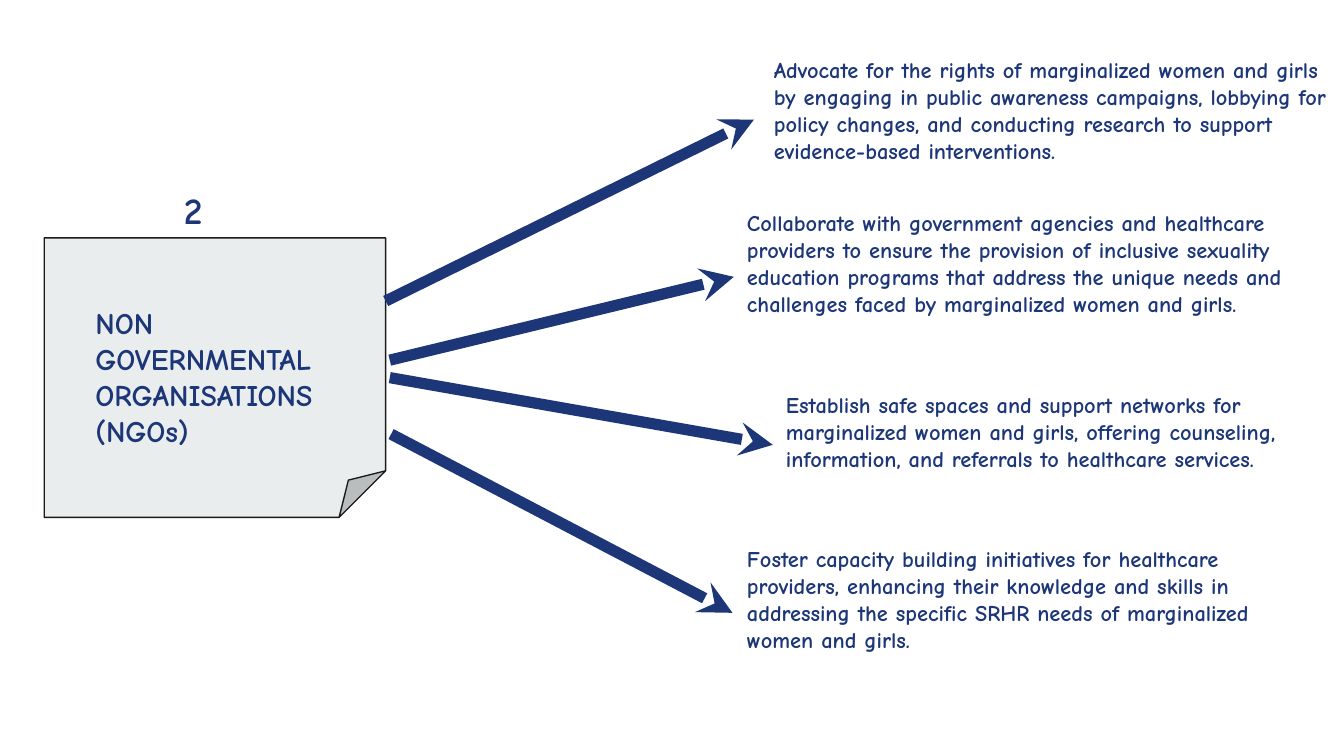
from dataclasses import dataclass

from pptx import Presentation
from pptx.dml.color import RGBColor
from pptx.enum.shapes import MSO_CONNECTOR, MSO_SHAPE
from pptx.enum.text import MSO_ANCHOR, MSO_AUTO_SIZE, PP_ALIGN
from pptx.oxml.ns import qn
from pptx.util import Inches, Pt
from lxml.etree import SubElement


@dataclass(frozen=True)
class Theme:
    font: str = "Comic Neue"
    ink: RGBColor = RGBColor(0x1C, 0x36, 0x78)
    card: RGBColor = RGBColor(0xE9, 0xED, 0xEE)
    outline: RGBColor = RGBColor(0x1A, 0x1A, 0x1A)
    number_size: int = 20
    title_size: int = 16
    body_size: int = 12
    outline_width: float = 0.75
    arrow_width: float = 6


THEME = Theme()
TITLE_ONLY = 5

CARD_BOX = (0.33, 1.77, 2.54, 2.08)
CARD_TITLE = "NON\nGOVERNMENTAL\nORGANISATIONS\n(NGOs)"

# Each role: text, text box, arrow start, arrow end
ROLES = [
    ("Advocate for the rights of marginalized women and girls by engaging in "
     "public awareness campaigns, lobbying for policy changes, and conducting "
     "research to support evidence-based interventions.",
     (5.66, 0.32, 4.45, 1.2), (2.87, 2.24), (5.61, 0.89)),
    ("Collaborate with government agencies and healthcare providers to ensure "
     "the provision of inclusive sexuality education programs that address the "
     "unique needs and challenges faced by marginalized women and girls.",
     (5.46, 1.46, 4.27, 1.2), (2.9, 2.68), (5.46, 2.06)),
    ("Establish safe spaces and support networks for marginalized women and "
     "girls, offering counseling, information, and referrals to healthcare "
     "services.",
     (5.75, 2.81, 4.27, 1), (2.9, 2.81), (5.75, 3.31)),
    ("Foster capacity building initiatives for healthcare providers, enhancing "
     "their knowledge and skills in addressing the specific SRHR needs of "
     "marginalized women and girls.",
     (5.46, 3.96, 4.27, 1), (2.91, 3.23), (5.45, 4.56)),
]


def inches(values):
    return [Inches(value) for value in values]


def write(shape, text, size):
    """Fill a shape with bold, left-aligned text in the theme's font."""
    frame = shape.text_frame
    frame.text = text
    frame.word_wrap = True
    frame.auto_size = MSO_AUTO_SIZE.SHAPE_TO_FIT_TEXT
    frame.vertical_anchor = MSO_ANCHOR.TOP
    frame.margin_left = frame.margin_right = Inches(0.1)
    frame.margin_top = frame.margin_bottom = Inches(0.1)
    for paragraph in frame.paragraphs:
        paragraph.alignment = PP_ALIGN.LEFT
        for run in paragraph.runs:
            run.font.name = THEME.font
            run.font.size = Pt(size)
            run.font.bold = True
            run.font.color.rgb = THEME.ink


def add_text(slide, box, text, size):
    write(slide.shapes.add_textbox(*inches(box)), text, size)


def add_arrow(slide, start, end):
    arrow = slide.shapes.add_connector(
        MSO_CONNECTOR.STRAIGHT, *inches(start + end))
    arrow.line.color.rgb = THEME.ink
    arrow.line.width = Pt(THEME.arrow_width)
    SubElement(arrow.line._get_or_add_ln(), qn("a:tailEnd"), type="stealth")
    SubElement(arrow._element.spPr, qn("a:effectLst"))


def add_card(slide, box):
    """Draw the folded note, with its number above and the title on it."""
    left, top, width, height = box
    card = slide.shapes.add_shape(MSO_SHAPE.FOLDED_CORNER, *inches(box))
    card.shadow.inherit = False
    card.fill.solid()
    card.fill.fore_color.rgb = THEME.card
    card.line.color.rgb = THEME.outline
    card.line.width = Pt(THEME.outline_width)

    title = slide.shapes.title
    title.left, title.top, title.width, title.height = inches(
        (left + 0.28, top + 0.4, 2.57, 1.3))
    write(title, CARD_TITLE, THEME.title_size)
    title._element.addprevious(card._element)  # keeps the card behind the title

    add_text(slide, (left + 0.94, top - 0.48, 10, 0.54),
             "2", THEME.number_size)


def add_role(slide, text, box, start, end):
    add_arrow(slide, start, end)
    add_text(slide, box, text, THEME.body_size)


def main():
    presentation = Presentation()
    presentation.slide_width = Inches(10)
    presentation.slide_height = presentation.slide_width * 9 // 16
    slide = presentation.slides.add_slide(
        presentation.slide_layouts[TITLE_ONLY])
    add_card(slide, CARD_BOX)
    for role in ROLES:
        add_role(slide, *role)
    presentation.save("out.pptx")


if __name__ == "__main__":
    main()
